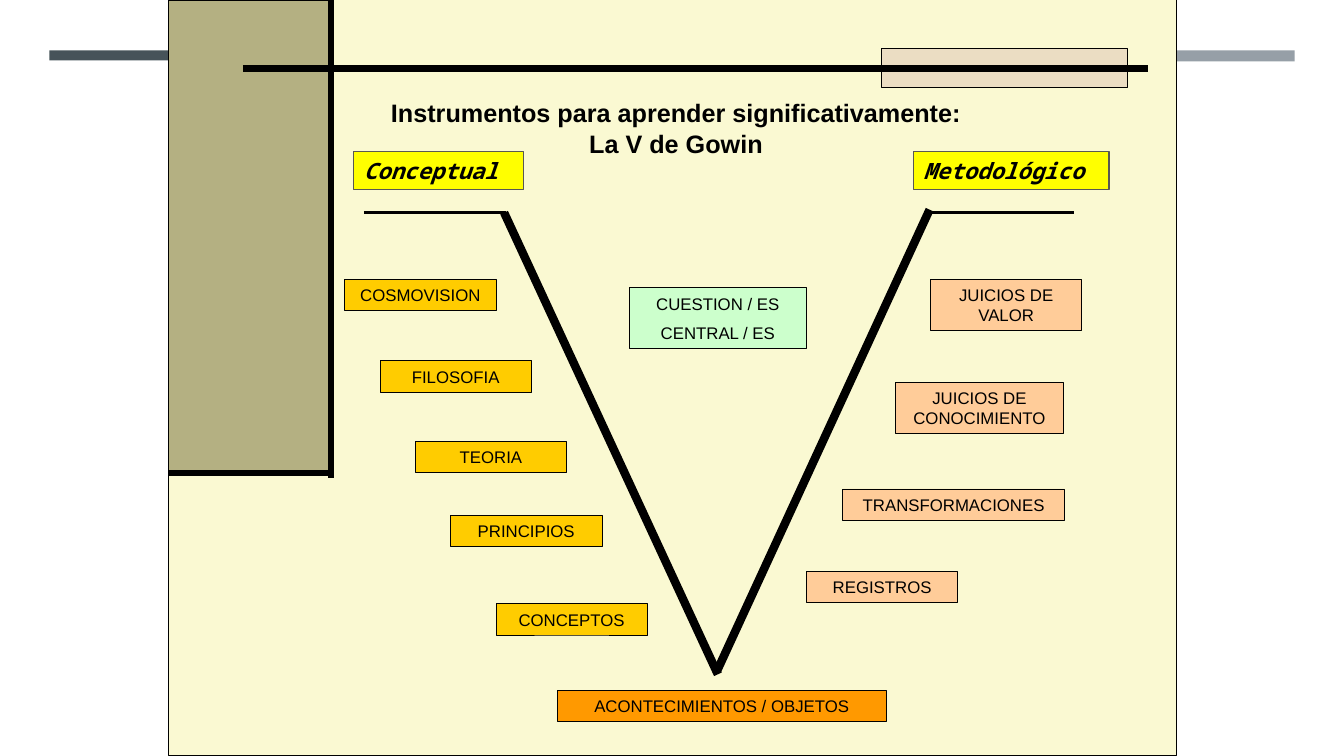
import pptx
import pptx.util
import pptx.dml.color
import pptx.enum.shapes
import pptx.enum.text
import pptx.oxml.ns
import lxml.etree

PX = 9144
BLACK = "000000"
CENTER = pptx.enum.text.PP_ALIGN.CENTER
LEFT = pptx.enum.text.PP_ALIGN.LEFT
MIDDLE = pptx.enum.text.MSO_ANCHOR.MIDDLE
TOP = pptx.enum.text.MSO_ANCHOR.TOP

BARS = [(49, 50, 405, 10, "465359"), (879, 50, 405, 11, "969FA7")]
PANELS = [(167, 0, 1000, 750, "FAF9D2"), (167, 0, 161, 469, "B4B082"), (874, 48, 244, 39, "EBDDC3")]
FRAME_LINES = [(167, 469, 328, 469), (241, 68, 1139, 68), (328, 474, 328, 0)]
HEADINGS = [("Conceptual", 351, 168), ("Metodológico", 906, 194)]
ARMS = [(361, 211, 502, 211), (924, 211, 1065, 211)]
V_SIDES = [(500, 211, 712, 669), (922, 208, 711, 666)]
CONCEPTUAL = [
    ("COSMOVISION", 342, 277),
    ("FILOSOFIA", 377, 358),
    ("TEORIA", 412, 438),
    ("PRINCIPIOS", 447, 511),
    ("CONCEPTOS", 492, 599),
]
METHODOLOGICAL = [
    ("REGISTROS", 800, 567, 150, 31),
    ("TRANSFORMACIONES", 836, 485, 220, 31),
    ("JUICIOS DE CONOCIMIENTO", 888, 379, 167, 51),
    ("JUICIOS DE VALOR", 923, 277, 150, 51),
]


def rgb(value):
    return pptx.dml.color.RGBColor.from_string(value)


def px(*values):
    return [v * PX for v in values]


def add_rect(s, x, y, w, h, fill, line=None, width=0.75):
    sp = s.shapes.add_shape(pptx.enum.shapes.MSO_SHAPE.RECTANGLE, *px(x, y, w, h))
    sp.shadow.inherit = False
    sp.fill.solid()
    sp.fill.fore_color.rgb = rgb(fill)
    if line:
        sp.line.color.rgb = rgb(line)
        sp.line.width = pptx.util.Pt(width)
    else:
        sp.line.fill.background()
    return sp


def add_line(s, x1, y1, x2, y2, width):
    cn = s.shapes.add_connector(pptx.enum.shapes.MSO_CONNECTOR.STRAIGHT, *px(x1, y1, x2, y2))
    cn.line.color.rgb = rgb(BLACK)
    cn.line.width = pptx.util.Pt(width)
    sp_pr = cn.element.find(pptx.oxml.ns.qn("p:spPr"))
    lxml.etree.SubElement(sp_pr, pptx.oxml.ns.qn("a:effectLst"))


def set_text(sp, text, size=12, font="Arial", bold=False, italic=False,
             align=CENTER, anchor=MIDDLE, gap=0):
    tf = sp.text_frame
    tf.word_wrap = True
    tf.auto_size = pptx.enum.text.MSO_AUTO_SIZE.NONE
    tf.vertical_anchor = anchor
    tf.margin_left = tf.margin_right = pptx.util.Inches(0.1)
    tf.margin_top = tf.margin_bottom = pptx.util.Inches(0.05)
    for i, line in enumerate(text.split("\n")):
        p = tf.add_paragraph() if i else tf.paragraphs[0]
        p.alignment = align
        p.line_spacing = 1.0
        p.space_before = pptx.util.Pt(gap if i else 0)
        r = p.add_run()
        r.text = line
        r.font.size = pptx.util.Pt(size)
        r.font.name = font
        r.font.bold = bold
        r.font.italic = italic
        r.font.color.rgb = rgb(BLACK)


def add_box(s, text, x, y, w, h, fill, gap=0):
    set_text(add_rect(s, x, y, w, h, fill, BLACK, 0.5), text, gap=gap)


def add_heading(s, text, x, w):
    sp = add_rect(s, x, 150, w, 38, "FFFF00", "585753")
    set_text(sp, text, size=16, font="Noto Sans Mono", bold=True, italic=True, align=LEFT)


def place_title(s, text):
    sp = s.shapes.title
    sp.left, sp.top, sp.width, sp.height = px(358, 92, 625, 70)
    set_text(sp, text, size=18, bold=True, anchor=TOP)
    s.shapes.element.append(sp.element)


def main():
    prs = pptx.Presentation()
    prs.slide_width, prs.slide_height = px(1333, 750)
    s = prs.slides.add_slide(prs.slide_layouts[5])

    for bar in BARS:
        add_rect(s, *bar)
    for panel in PANELS:
        add_rect(s, *panel, line=BLACK)
    for line in FRAME_LINES:
        add_line(s, *line, width=4.5)

    for heading in HEADINGS:
        add_heading(s, *heading)
    for arm in ARMS:
        add_line(s, *arm, width=2)

    for text, x, y in CONCEPTUAL:
        add_box(s, text, x, y, 150, 31, "FFCC00")
    add_box(s, "ACONTECIMIENTOS / OBJETOS", 553, 685, 326, 31, "FF9900")
    for box in METHODOLOGICAL:
        add_box(s, *box, fill="FFCC99")
    add_box(s, "CUESTION / ES\nCENTRAL / ES", 624, 285, 176, 61, "CCFFCC", gap=6)

    for side in V_SIDES:
        add_line(s, *side, width=6)
    place_title(s, "Instrumentos para aprender significativamente:\nLa V de Gowin")
    prs.save("out.pptx")


if __name__ == "__main__":
    main()
